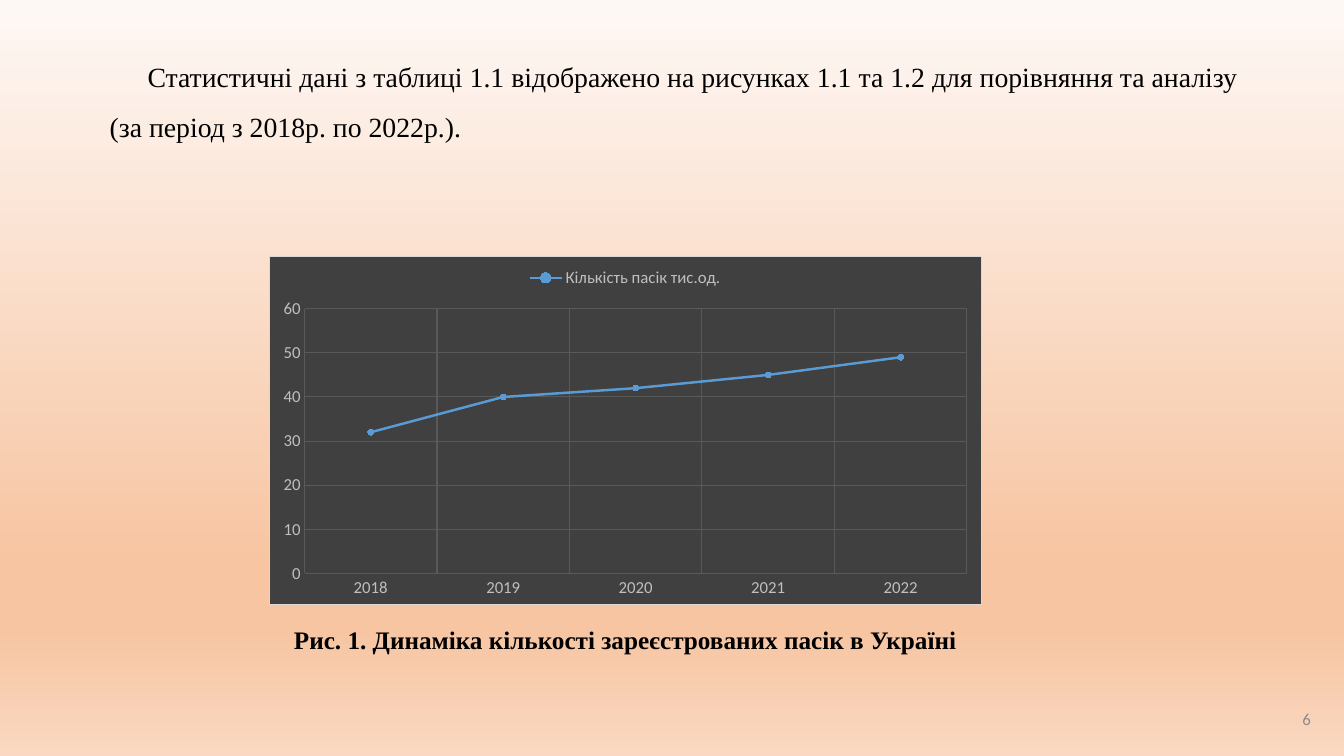
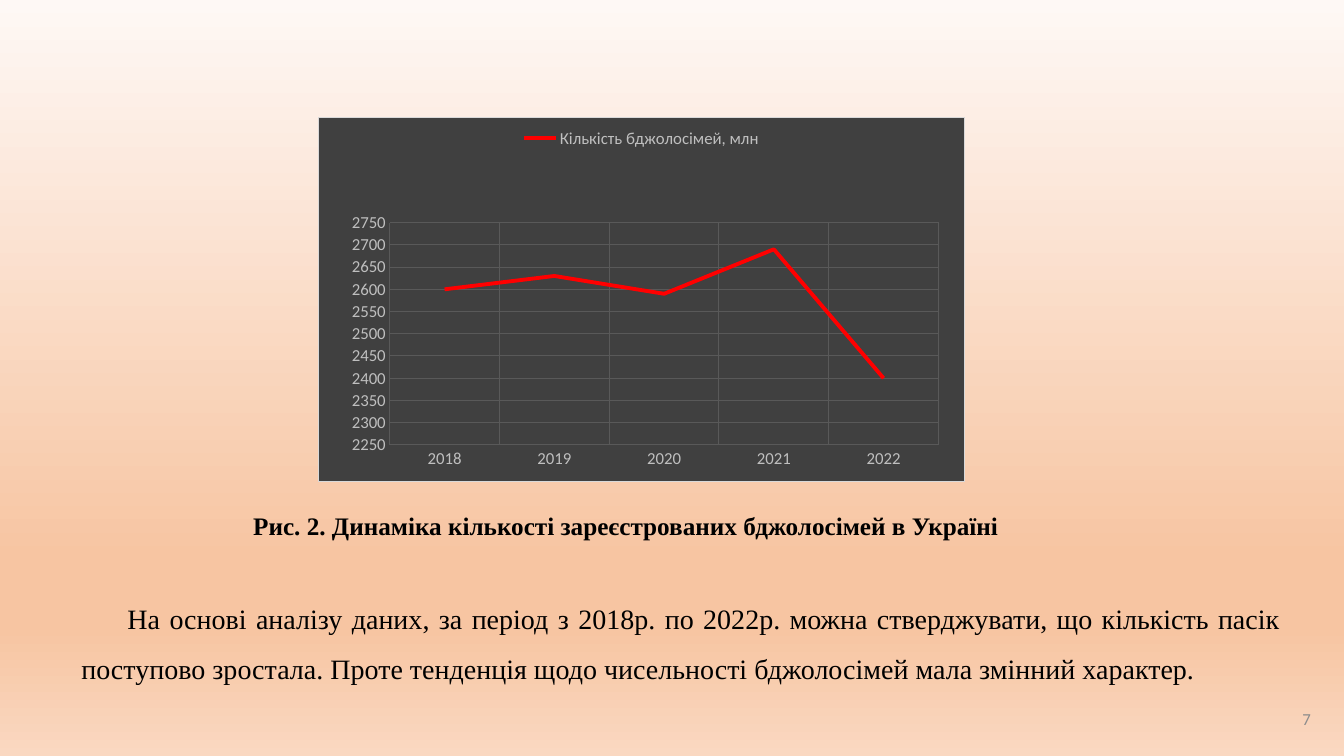
from lxml.etree import SubElement
from pptx import Presentation
from pptx.chart.data import CategoryChartData
from pptx.dml.color import RGBColor
from pptx.enum.chart import XL_CHART_TYPE, XL_LEGEND_POSITION, XL_MARKER_STYLE, XL_TICK_MARK
from pptx.enum.text import MSO_ANCHOR, PP_ALIGN
from pptx.oxml import parse_xml
from pptx.oxml.ns import nsdecls, qn
from pptx.util import Pt

SCALE = 9525
YEARS = ["2018", "2019", "2020", "2021", "2022"]


def px(*vals):
    return [val * SCALE for val in vals]


def rgb(code):
    return RGBColor.from_string(code)


class Deck:
    """Holds the shared style and the current slide."""

    serif, sans = "Times New Roman", "Calibri"
    ink, gray, pale = "000000", "8C8C8C", "BFBFBF"
    panel, grid, edge = "404040", "595959", "D9D9D9"
    stops = [(0, "FEF8F5"), (74, "F7C5A2"), (83, "F7C5A2"), (100, "FAD8C1")]

    def __init__(self):
        self.prs = Presentation()
        self.prs.slide_width, self.prs.slide_height = px(1280, 720)
        self.paint()

    def paint(self):
        master = self.prs.slide_master
        fill = master.background.fill
        fill.gradient()
        fill.gradient_angle = 270
        ramp = master.element.xpath(".//p:bg//a:gsLst")[0]
        ramp.clear()
        for spot, code in self.stops:
            stop = SubElement(ramp, qn("a:gs"), pos=str(spot * 1000))
            SubElement(stop, qn("a:srgbClr"), val=code)

    def page(self, num):
        self.slide = self.prs.slides.add_slide(self.prs.slide_layouts[6])
        self.text((1200, 664, 58, 41), str(num), 12, PP_ALIGN.RIGHT,
                  MSO_ANCHOR.MIDDLE, font=self.sans, color=self.gray)

    def text(self, box, words, size, align, anchor=MSO_ANCHOR.TOP,
             font=serif, color=ink, wrap=True):
        frame = self.slide.shapes.add_textbox(*px(*box)).text_frame
        frame.word_wrap = wrap
        frame.vertical_anchor = anchor
        para = frame.paragraphs[0]
        para.text = words
        para.alignment = align
        para.font.size = Pt(size)
        para.font.name = font
        para.font.color.rgb = rgb(color)
        return para

    def body(self, box, words, size, indent, anchor=MSO_ANCHOR.TOP, before=0):
        para = self.text(box, words, size, PP_ALIGN.JUSTIFY, anchor)
        para.line_spacing = 1.5
        para.space_before = Pt(before)
        para._p.get_or_add_pPr().set("indent", str(indent * SCALE))

    def label(self, box, words):
        para = self.text(box, words, 18, PP_ALIGN.CENTER, wrap=False)
        para.font.bold = True
        para.line_spacing = 1.07
        para.space_after = Pt(8)

    def chart(self, box, kind, name, vals, color, width, span):
        data = CategoryChartData()
        data.categories = YEARS
        data.add_series(name, vals)
        chart = self.slide.shapes.add_chart(kind, *px(*box), data).chart
        chart.has_title = False
        chart.font.size = Pt(12)
        chart.font.name = self.sans
        chart.font.color.rgb = rgb(self.pale)
        chart.has_legend = True
        chart.legend.position = XL_LEGEND_POSITION.TOP
        chart.legend.include_in_layout = False
        for axis in (chart.category_axis, chart.value_axis):
            axis.major_tick_mark = XL_TICK_MARK.NONE
            axis.has_major_gridlines = True
            line = axis.major_gridlines.format.line
            line.color.rgb = rgb(self.grid)
            line.width = Pt(0.75)
            axis.format.line.fill.background()
        axis = chart.value_axis
        axis.minimum_scale, axis.maximum_scale, axis.major_unit = span
        plot = chart.plots[0]
        plot.vary_by_categories = False
        line = plot.series[0]
        line.smooth = False
        line.format.line.color.rgb = rgb(color)
        line.format.line.width = Pt(width)
        self.frame(chart)
        return chart

    def frame(self, chart):
        chart.element.find(qn("c:chart")).addnext(parse_xml(
            f'<c:spPr {nsdecls("c", "a")}>'
            f'<a:solidFill><a:srgbClr val="{self.panel}"/></a:solidFill>'
            f'<a:ln w="{Pt(0.75)}"><a:solidFill><a:srgbClr val="{self.edge}"/>'
            '</a:solidFill></a:ln></c:spPr>'))

    def dots(self, chart, color, size):
        mark = chart.plots[0].series[0].marker
        mark.style = XL_MARKER_STYLE.CIRCLE
        mark.size = size
        mark.format.fill.solid()
        mark.format.fill.fore_color.rgb = rgb(color)
        mark.format.line.color.rgb = rgb(color)

    def inner(self, chart, *rect):
        area = chart.element.find(".//" + qn("c:plotArea"))
        for old in area.findall(qn("c:layout")):
            area.remove(old)
        tags = [("layoutTarget", "inner"), ("xMode", "edge"), ("yMode", "edge")]
        tags += zip("xywh", rect)
        parts = "".join(f'<c:{tag} val="{val}"/>' for tag, val in tags)
        area.insert(0, parse_xml(
            f'<c:layout {nsdecls("c")}><c:manualLayout>{parts}'
            '</c:manualLayout></c:layout>'))


def main():
    deck = Deck()

    deck.page(6)
    deck.body((95, 44, 1093, 97),
              "Статистичні дані з таблиці 1.1 відображено на рисунках 1.1 та 1.2 "
              "для порівняння та аналізу (за період з 2018р. по 2022р.).",
              19.8, 36, MSO_ANCHOR.BOTTOM)
    blue = "5B9BD5"
    chart = deck.chart((256, 244, 679, 332), XL_CHART_TYPE.LINE_MARKERS_STACKED,
                       "Кількість пасік тис.од.", [32, 40, 42, 45, 49],
                       blue, 1.75, (0, 60, 10))
    deck.dots(chart, blue, 4)
    deck.label((267, 588, 657, 39),
               "Рис. 1. Динаміка кількості зареєстрованих пасік в Україні")

    deck.page(7)
    deck.body((68, 552, 1161, 123),
              "На основі аналізу даних, за період з 2018р. по 2022р. можна "
              "стверджувати, що кількість пасік поступово зростала. Проте "
              "тенденція щодо чисельності бджолосімей мала змінний характер.",
              20, 44, before=10)
    chart = deck.chart((303, 111, 616, 348), XL_CHART_TYPE.LINE_STACKED,
                       "Кількість бджолосімей, млн", [2600, 2630, 2590, 2690, 2400],
                       "FF0000", 2.75, (2250, 2750, 50))
    deck.inner(chart, 0.11, 0.29, 0.85, 0.61)
    deck.label((228, 479, 736, 39),
               "Рис. 2. Динаміка кількості зареєстрованих бджолосімей в Україні")

    deck.prs.save("out.pptx")


if __name__ == "__main__":
    main()
